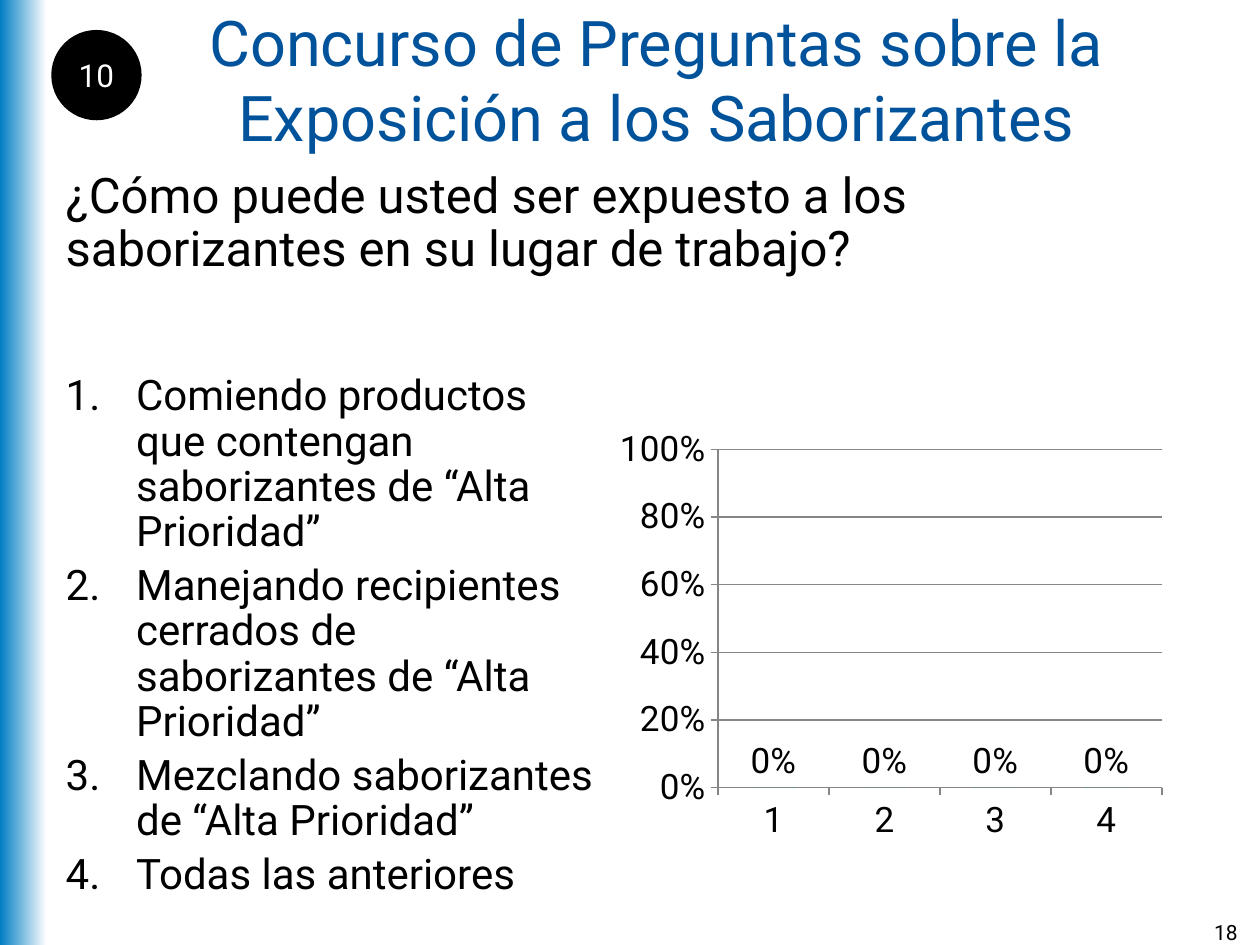
from lxml import etree
from pptx import Presentation
from pptx import util as u
from pptx.chart import data
from pptx.dml import color
from pptx.enum import chart as ch, shapes, text
from pptx.oxml import ns

FONT = "Roboto"
HUES = {"blue": "007DC3", "title": "00539B", "ink": "000000",
        "white": "FFFFFF", "bar": "00CC99", "grid": "868686"}
LEFT = 1.07
PICKS = ["Comiendo productos que contengan saborizantes de “Alta Prioridad”",
         "Manejando recipientes cerrados de saborizantes de “Alta Prioridad”",
         "Mezclando saborizantes de “Alta Prioridad”",
         "Todas las anteriores"]


def hue(name):
    return color.RGBColor.from_string(HUES[name])


def place(shape, box):
    shape.left, shape.top, shape.width, shape.height = [u.Cm(n) for n in box]


def style(font, size, tint="ink"):
    font.name, font.size, font.color.rgb = FONT, u.Pt(size), hue(tint)


def write(shape, lines, size, tint="ink", align="LEFT", anchor="TOP",
          wrap=True, inset=None, space=None, before=0, bullet=None, indent=0):
    frame = shape.text_frame
    frame.word_wrap = wrap
    frame.auto_size = text.MSO_AUTO_SIZE.NONE
    frame.vertical_anchor = getattr(text.MSO_ANCHOR, anchor)
    if inset is not None:
        frame.margin_left = frame.margin_right = u.Cm(inset)
        frame.margin_top = frame.margin_bottom = u.Cm(inset)
    for i, line in enumerate(lines):
        para = frame.paragraphs[0] if i == 0 else frame.add_paragraph()
        para.alignment = getattr(text.PP_ALIGN, align)
        para.line_spacing = space or 1.0
        para.space_before = u.Pt(before)
        run = para.add_run()
        run.text = line
        style(run.font, size, tint)
        props = para._p.get_or_add_pPr()
        props.set("marL", str(u.Cm(indent)))
        props.set("indent", str(-u.Cm(indent)))
        mark = etree.SubElement(props, ns.qn("a:buAutoNum" if bullet else "a:buNone"))
        if bullet:
            mark.set("type", bullet)


def draw_side(slide, box):
    side = slide.shapes.add_shape(shapes.MSO_SHAPE.RECTANGLE, 0, 0, 0, 0)
    place(side, box)
    side.shadow.inherit = False
    side.line.fill.background()
    side.fill.gradient()
    side.fill.gradient_angle = 0
    for stop, name in zip(side.fill.gradient_stops, ("blue", "white")):
        stop.color.rgb = hue(name)


def draw_head(slide, box):
    head = slide.shapes.title
    place(head, box)
    write(head, ["Concurso de Preguntas sobre la Exposición a los Saborizantes"],
          36, tint="title", align="CENTER", anchor="MIDDLE")
    left, top = box[:2]
    disc = slide.shapes.add_shape(shapes.MSO_SHAPE.OVAL, 0, 0, 0, 0)
    place(disc, (left, top + 0.64, 1.75, 1.75))
    disc.shadow.inherit = False
    disc.fill.solid()
    disc.fill.fore_color.rgb = disc.line.color.rgb = hue("ink")
    disc.line.width = u.Pt(2)
    write(disc, ["10"], 18, tint="white", align="CENTER", anchor="MIDDLE",
          wrap=False, inset=0)


def draw_quiz(slide, box):
    left, top, width, height = box
    ask, list_ = slide.placeholders[1], slide.placeholders[2]
    place(ask, (left, top, width, 1.9))
    write(ask, ["¿Cómo puede usted ser expuesto a los saborizantes en su lugar de trabajo?"],
          28, space=0.9, before=5.6)
    drop = 4.09
    place(list_, (left, top + drop, 11.38, height - drop))
    write(list_, PICKS, 24, space=0.9, before=4.8,
          bullet="arabicPeriod", indent=1.42)


def draw_chart(slide, box):
    votes = data.CategoryChartData(number_format="0%")
    votes.categories = ["1", "2", "3", "4"]
    votes.add_series("Series 1", [0] * 4)
    chart = slide.shapes.add_chart(ch.XL_CHART_TYPE.COLUMN_CLUSTERED,
                                   *[u.Cm(n) for n in box], votes).chart
    chart.has_legend = chart.has_title = False
    style(chart.font, 20)
    plot = chart.plots[0]
    plot.gap_width, plot.vary_by_categories = 150, False
    bars = plot.series[0]
    bars.format.fill.solid()
    bars.format.fill.fore_color.rgb = hue("bar")
    tags = bars.data_labels
    tags.show_value = True
    tags.number_format, tags.number_format_is_linked = "0%", False
    tags.position = ch.XL_LABEL_POSITION.OUTSIDE_END
    style(tags.font, 20)
    rate = chart.value_axis
    rate.minimum_scale, rate.maximum_scale, rate.major_unit = 0, 1, 0.2
    rate.has_major_gridlines = True
    rate.major_gridlines.format.line.color.rgb = hue("grid")
    rate.tick_labels.number_format = "0%"
    rate.tick_labels.number_format_is_linked = False
    for axis in (rate, chart.category_axis):
        axis.major_tick_mark = ch.XL_TICK_MARK.OUTSIDE
        axis.format.line.color.rgb = hue("grid")


def draw_foot(slide, box):
    foot = slide.shapes.add_textbox(0, 0, 0, 0)
    place(foot, box)
    write(foot, ["18"], 12, align="RIGHT")


def main():
    deck = Presentation()
    deck.slide_width, deck.slide_height = u.Cm(25.4), u.Cm(19.05)
    slide = deck.slides.add_slide(deck.slide_layouts[3])
    draw_side(slide, (0, 0, 0.94, 19.05))
    draw_head(slide, (LEFT, 0, 24.33, 3.18))
    draw_quiz(slide, (LEFT, 3.33, 23.29, 13.41))
    draw_chart(slide, (12.27, 8.46, 11.38, 8.69))
    draw_foot(slide, (23.93, 18.42, 1.27, 0.63))
    deck.save("out.pptx")


if __name__ == "__main__":
    main()
